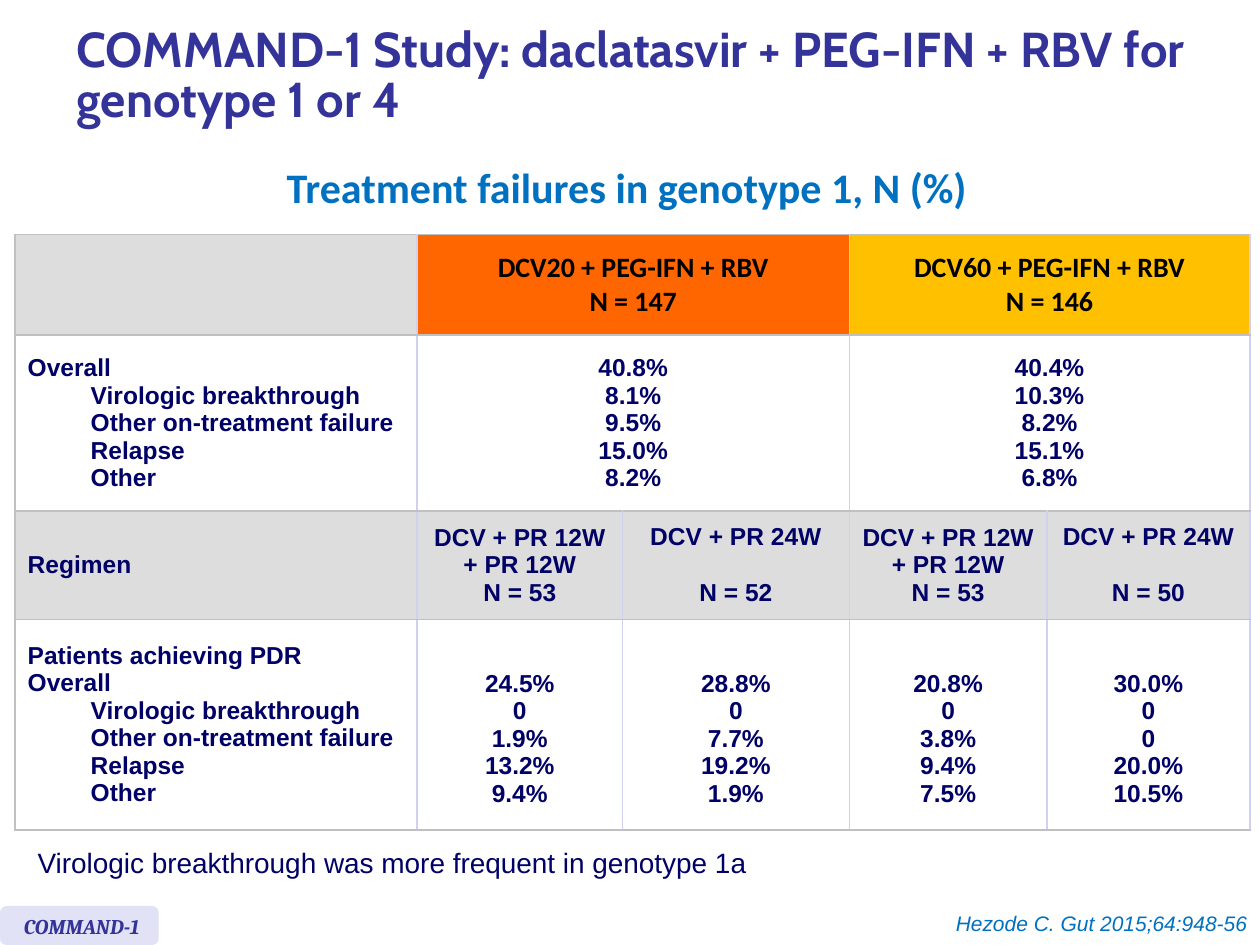
from lxml import etree
from pptx import Presentation
from pptx.dml.color import RGBColor
from pptx.enum.shapes import MSO_SHAPE
from pptx.enum.text import MSO_ANCHOR, PP_ALIGN
from pptx.oxml.ns import qn
from pptx.util import Pt

INDIGO, NAVY, BLUE, BLACK = "333399", "000066", "0070C0", "000000"
GREY, WHITE, ORANGE, AMBER, LAVENDER = "DDDDDD", "FFFFFF", "FF6600", "FFC000", "E2E2F6"
RULE_H, RULE_V = "C0C0C0", "D0D0F0"
LINE = 16.1  # height of one 14 pt line

FAILURES = ["Virologic breakthrough", "Other on-treatment failure", "Relapse", "Other"]


def rgb(value):
    return RGBColor.from_string(value)


class SlideBuilder:
    def __init__(self, slide):
        self.s = slide

    def fill_text(self, tf, lines, font, size, color, align=PP_ALIGN.LEFT,
                  bold=False, italic=False, indented=(), gap=0):
        for i, line in enumerate(lines):
            p = tf.paragraphs[0] if i == 0 else tf.add_paragraph()
            p.text = line
            p.alignment = align
            if line in indented:
                p.level = 1
                pPr = p._p.get_or_add_pPr()
                pPr.set("marL", str(Pt(36)))
                pPr.set("indent", "0")
            if i and gap:
                p.space_before = Pt(gap)
            f = p.font
            f.name, f.size, f.bold, f.italic = font, Pt(size), bold, italic
            f.color.rgb = rgb(color)

    def text(self, x, y, w, h, line, font, size, color, wrap=True,
             anchor=MSO_ANCHOR.TOP, spacing=None, **style):
        sp = self.s.shapes.add_textbox(Pt(x), Pt(y), Pt(w), Pt(h))
        tf = sp.text_frame
        tf.word_wrap, tf.vertical_anchor = wrap, anchor
        self.fill_text(tf, [line], font, size, color, **style)
        if spacing:
            tf.paragraphs[0].line_spacing = spacing
        return sp

    def badge(self, x, y, w, h, fill):
        sp = self.s.shapes.add_shape(MSO_SHAPE.ROUNDED_RECTANGLE, Pt(x), Pt(y), Pt(w), Pt(h))
        sp.shadow.inherit = False
        sp.fill.solid()
        sp.fill.fore_color.rgb = rgb(fill)
        sp.line.fill.background()
        return sp

    def table(self, x, y, widths, heights):
        frame = self.s.shapes.add_table(len(heights), len(widths), Pt(x), Pt(y),
                                        Pt(sum(widths)), Pt(sum(heights)))
        tbl = frame.table
        tbl.first_row = tbl.horz_banding = False
        for col, w in zip(tbl.columns, widths):
            col.width = Pt(w)
        for row, h in zip(tbl.rows, heights):
            row.height = Pt(h)
        return tbl

    def cell(self, cell, fill, first):
        tcPr = cell._tc.get_or_add_tcPr()
        left = RULE_H if first else RULE_V
        for side, color in zip("LRTB", (left, RULE_V, RULE_H, RULE_H)):
            ln = etree.SubElement(tcPr, qn(f"a:ln{side}"), w=str(Pt(1)))
            solid = etree.SubElement(ln, qn("a:solidFill"))
            etree.SubElement(solid, qn("a:srgbClr"), val=color)
        cell.fill.solid()
        cell.fill.fore_color.rgb = rgb(fill)
        cell.vertical_anchor = MSO_ANCHOR.MIDDLE


def failures_table(b):
    tbl = b.table(8.64, 133.9, [229.7, 117.4, 129.6, 113, 115.9], [57.5, 100.7, 61.8, 120.3])
    fills = [[GREY, ORANGE, ORANGE, AMBER, AMBER], [WHITE] * 5, [GREY] * 5, [WHITE] * 5]
    for r, row in enumerate(fills):
        for c, fill in enumerate(row):
            b.cell(tbl.cell(r, c), fill, c == 0)
    for r in (0, 1):
        for c in (1, 3):
            tbl.cell(r, c).merge(tbl.cell(r, c + 1))

    def put(r, c, lines, font="Arial", size=14, color=NAVY, **style):
        align = PP_ALIGN.CENTER if c else PP_ALIGN.LEFT
        b.fill_text(tbl.cell(r, c).text_frame, lines, font, size, color, align, bold=True, **style)

    # Row labels
    put(1, 0, ["Overall", *FAILURES], indented=FAILURES)
    put(2, 0, ["Regimen"])
    put(3, 0, ["Patients achieving PDR", "Overall", *FAILURES], indented=FAILURES)

    # Treatment arms
    arms = [("DCV20", 147, ["40.8%", "8.1%", "9.5%", "15.0%", "8.2%"]),
            ("DCV60", 146, ["40.4%", "10.3%", "8.2%", "15.1%", "6.8%"])]
    for c, (dose, n, rates) in zip((1, 3), arms):
        put(0, c, [f"{dose} + PEG-IFN + RBV", f"N = {n}"], "Calibri", 16, BLACK)
        put(1, c, rates)

    # Regimens; rates start one line down, level with "Overall"
    long, short = "DCV + PR 12W + PR 12W", "DCV + PR 24W"
    regimens = [(long, 53, ["24.5%", "0", "1.9%", "13.2%", "9.4%"]),
                (short, 52, ["28.8%", "0", "7.7%", "19.2%", "1.9%"]),
                (long, 53, ["20.8%", "0", "3.8%", "9.4%", "7.5%"]),
                (short, 50, ["30.0%", "0", "0", "20.0%", "10.5%"])]
    for c, (name, n, rates) in enumerate(regimens, 1):
        put(2, c, [name, f"N = {n}"], gap=LINE if name == short else 0)
        put(3, c, rates)
        tbl.cell(3, c).margin_top = Pt(3.6 + LINE)


def main():
    prs = Presentation()
    prs.slide_width, prs.slide_height = Pt(720), Pt(540)
    b = SlideBuilder(prs.slides.add_slide(prs.slide_layouts[6]))

    # Headings
    b.text(36.7, 5.8, 657.4, 77, "COMMAND-1 Study: daclatasvir + PEG-IFN + RBV for genotype 1 or 4",
           "Cabin", 28, INDIGO, bold=True, anchor=MSO_ANCHOR.MIDDLE, spacing=0.85)
    b.text(76.3, 88.6, 563.8, 36, "Treatment failures in genotype 1, N (%)",
           "Calibri", 24, BLUE, bold=True, align=PP_ALIGN.CENTER)

    failures_table(b)

    # Note and citation
    b.text(14.4, 479.5, 424.8, 26.6, "Virologic breakthrough was more frequent in genotype 1a",
           "Arial", 16, NAVY, wrap=False)
    b.text(433.4, 517, 286.6, 21.6, "Hezode C. Gut 2015;64:948-56",
           "Arial", 12, BLUE, italic=True, align=PP_ALIGN.RIGHT)

    # Study badge
    badge = b.badge(0, 517.7, 90.7, 22.3, LAVENDER)
    label = b.text(6.5, 518.4, 92.9, 21.6, "COMMAND-1", "Cambria", 12, INDIGO, bold=True, italic=True)
    b.s.shapes.add_group_shape([badge, label])

    prs.save("out.pptx")


if __name__ == "__main__":
    main()
